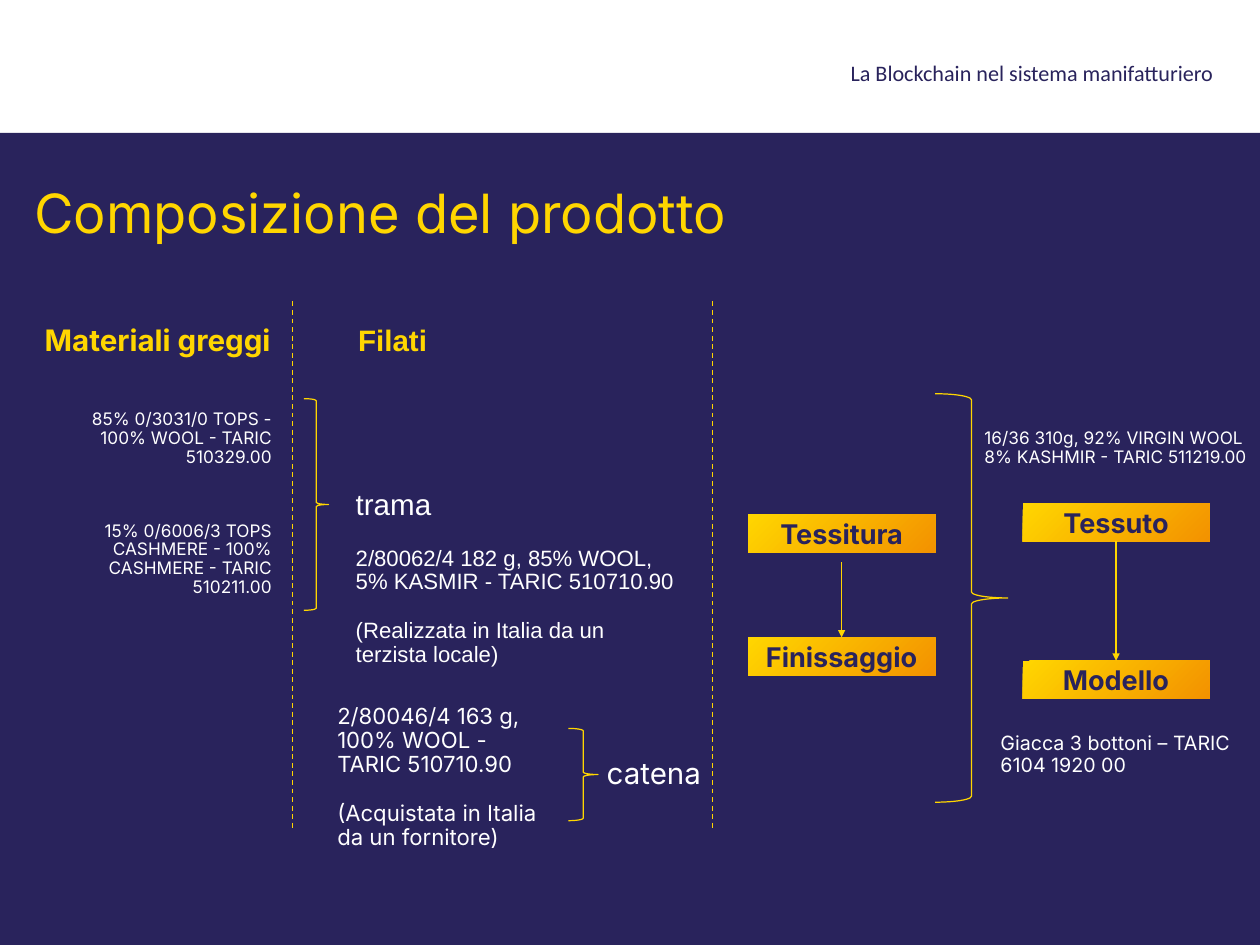
from lxml.etree import SubElement
from pptx import Presentation
from pptx.dml.color import RGBColor
from pptx.enum.dml import MSO_LINE
from pptx.enum.shapes import MSO_CONNECTOR, MSO_SHAPE
from pptx.enum.text import MSO_ANCHOR, PP_ALIGN
from pptx.oxml.ns import qn
from pptx.util import Pt

WIDTH, HEIGHT, HEADER_HEIGHT = 1024, 768, 108
NAVY, YELLOW, ORANGE, WHITE = "29235C", "FFD600", "F39200", "FFFFFF"
STEP_WIDTH, STEP_HEIGHT = 152, 31


def rgb(hex_colour):
    """Turn a hex string into a colour."""
    return RGBColor.from_string(hex_colour)


def write(frame, lines, colour, font="Inter", bold=False, align=PP_ALIGN.LEFT,
          spacing=0.9, inset=None, anchor=MSO_ANCHOR.TOP):
    """Fill a text frame with (text, size) paragraphs."""
    frame.word_wrap = True
    frame.vertical_anchor = anchor
    if inset is not None:
        frame.margin_left = frame.margin_right = Pt(inset)
        frame.margin_top = frame.margin_bottom = Pt(inset)
    for index, (text, size) in enumerate(lines):
        paragraph = frame.paragraphs[0] if index == 0 else frame.add_paragraph()
        paragraph.alignment = align
        paragraph.line_spacing = spacing
        if index:
            paragraph.space_before = Pt(20)
        run = paragraph.add_run()
        run.text = text
        run.font.name, run.font.size, run.font.bold = font, Pt(size), bold
        run.font.color.rgb = rgb(colour)


def label(slide, box, lines, colour=WHITE, **style):
    """Add a text box."""
    caption = slide.shapes.add_textbox(*map(Pt, box))
    write(caption.text_frame, lines, colour, **style)


def brace(slide, box):
    """Add a yellow right brace."""
    bracket = slide.shapes.add_shape(MSO_SHAPE.RIGHT_BRACE, *map(Pt, box))
    bracket.shadow.inherit = False
    bracket.fill.background()
    bracket.line.color.rgb = rgb(YELLOW)
    bracket.line.width = Pt(1)


def rule(slide, x, top, bottom):
    """Add a vertical yellow line and return it."""
    line = slide.shapes.add_connector(MSO_CONNECTOR.STRAIGHT, Pt(x), Pt(top), Pt(x), Pt(bottom))
    line.line.color.rgb = rgb(YELLOW)
    line.line.width = Pt(1)
    SubElement(line._element.spPr, qn("a:effectLst"))
    return line


def divider(slide, box):
    """Add a dashed line along the left edge of a column."""
    left, top, _, height = box
    rule(slide, left, top, top + height).line.dash_style = MSO_LINE.DASH


def arrow(slide, x, top, target, source=None):
    """Add an arrow down to the target step, from the source step if given."""
    line = rule(slide, x, top, target.top.pt)
    SubElement(line.line._get_or_add_ln(), qn("a:tailEnd"), type="triangle")
    if source is not None:
        line.begin_connect(source, 2)
    line.end_connect(target, 0)


def step(slide, left, top, name):
    """Add a gradient step box and return it."""
    block = slide.shapes.add_shape(MSO_SHAPE.RECTANGLE, Pt(left), Pt(top),
                                   Pt(STEP_WIDTH), Pt(STEP_HEIGHT))
    block.shadow.inherit = False
    block.line.fill.background()
    block.fill.gradient()
    block.fill.gradient_angle = 315
    for stop, colour in zip(block.fill.gradient_stops, (YELLOW, ORANGE)):
        stop.color.rgb = rgb(colour)
    write(block.text_frame, [(name, 22)], NAVY, bold=True, align=PP_ALIGN.CENTER,
          spacing=1.0, inset=2, anchor=MSO_ANCHOR.MIDDLE)
    return block


def header(slide, box):
    """Place the running header."""
    left, top, width, _ = box
    label(slide, (left + width - 417, top + 50, 381, 23),
          [("La Blockchain nel sistema manifatturiero", 18)], NAVY,
          font="Calibri", align=PP_ALIGN.RIGHT, spacing=0.8, inset=2)


def panel(slide, box):
    """Place the navy panel and its title."""
    left, top, width, _ = box
    ground = slide.shapes.add_shape(MSO_SHAPE.RECTANGLE, *map(Pt, box))
    ground.shadow.inherit = False
    ground.fill.solid()
    ground.fill.fore_color.rgb = rgb(NAVY)
    ground.line.fill.background()
    label(slide, (left + 26, top + 46, width - 52, 47), [("Composizione del prodotto", 44)],
          YELLOW, spacing=0.8, inset=2, anchor=MSO_ANCHOR.MIDDLE)


def raw_materials(slide, box):
    """Place the raw materials column."""
    left, top, _, _ = box
    label(slide, (left + 26, top + 16, 201, 33), [("Materiali greggi", 24)], YELLOW,
          bold=True, align=PP_ALIGN.RIGHT)
    for offset, height, material in (
            (85.5, 53, "85% 0/3031/0 TOPS - 100% WOOL - TARIC 510329.00"),
            (176, 68, "15% 0/6006/3 TOPS CASHMERE - 100% CASHMERE - TARIC 510211.00")):
        label(slide, (left + 64, top + offset, 164, height), [(material, 14)],
              align=PP_ALIGN.RIGHT)


def yarns(slide, box):
    """Place the yarns column."""
    left, top, _, _ = box
    divider(slide, box)
    label(slide, (left + 46, top + 16, 161, 33), [("Filati", 24)], YELLOW,
          font="Arial", bold=True)
    brace(slide, (left + 9, top + 79, 20, 172))
    label(slide, (left + 44, top + 150, 276, 153),
          [("trama", 24),
           ("2/80062/4 182 g, 85% WOOL, 5% KASMIR - TARIC 510710.90", 18),
           ("(Realizzata in Italia da un terzista locale)", 18)], font="Arial")
    label(slide, (left + 29, top + 325, 187, 126),
          [("2/80046/4 163 g, 100% WOOL - TARIC 510710.90", 18),
           ("(Acquistata in Italia da un fornitore)", 18)])
    brace(slide, (left + 224, top + 347, 24, 75))
    label(slide, (left + 248, top + 368, 103, 33), [("catena", 24)])


def processing(slide, box):
    """Place the weaving and finishing steps."""
    left, top, _, _ = box
    divider(slide, box)
    step(slide, left + 29, top + 173, "Tessitura")
    finishing = step(slide, left + 29, top + 273, "Finissaggio")
    arrow(slide, left + 29 + STEP_WIDTH / 2, top + 212, finishing)
    brace(slide, (left + 181, top + 75, 59, 332))


def fabric(slide, box):
    """Place the fabric and garment column."""
    left, top, width, _ = box
    label(slide, (left, top + 101, 228, 38),
          [("16/36 310g, 92% VIRGIN WOOL 8% KASHMIR - TARIC 511219.00", 14)])
    cloth = step(slide, left + 38, top + 164, "Tessuto")
    garment = step(slide, left + 38, top + 292, "Modello")
    arrow(slide, left + 38 + STEP_WIDTH / 2, top + 164 + STEP_HEIGHT, garment, cloth)
    label(slide, (left + 13, top + 348, width - 13, 42),
          [("Giacca 3 bottoni – TARIC 6104 1920 00", 16)])


def main():
    """Build and save the slide."""
    deck = Presentation()
    deck.slide_width, deck.slide_height = Pt(WIDTH), Pt(HEIGHT)
    slide = deck.slides.add_slide(deck.slide_layouts[6])
    panel(slide, (0, HEADER_HEIGHT, WIDTH, HEIGHT - HEADER_HEIGHT))
    header(slide, (0, 0, WIDTH, HEADER_HEIGHT))
    edges = (0, 238, 579, 793, WIDTH)
    columns = (raw_materials, yarns, processing, fabric)
    for column, left, right in zip(columns, edges, edges[1:]):
        column(slide, (left, 245, right - left, 430))
    deck.save("out.pptx")


if __name__ == "__main__":
    main()
